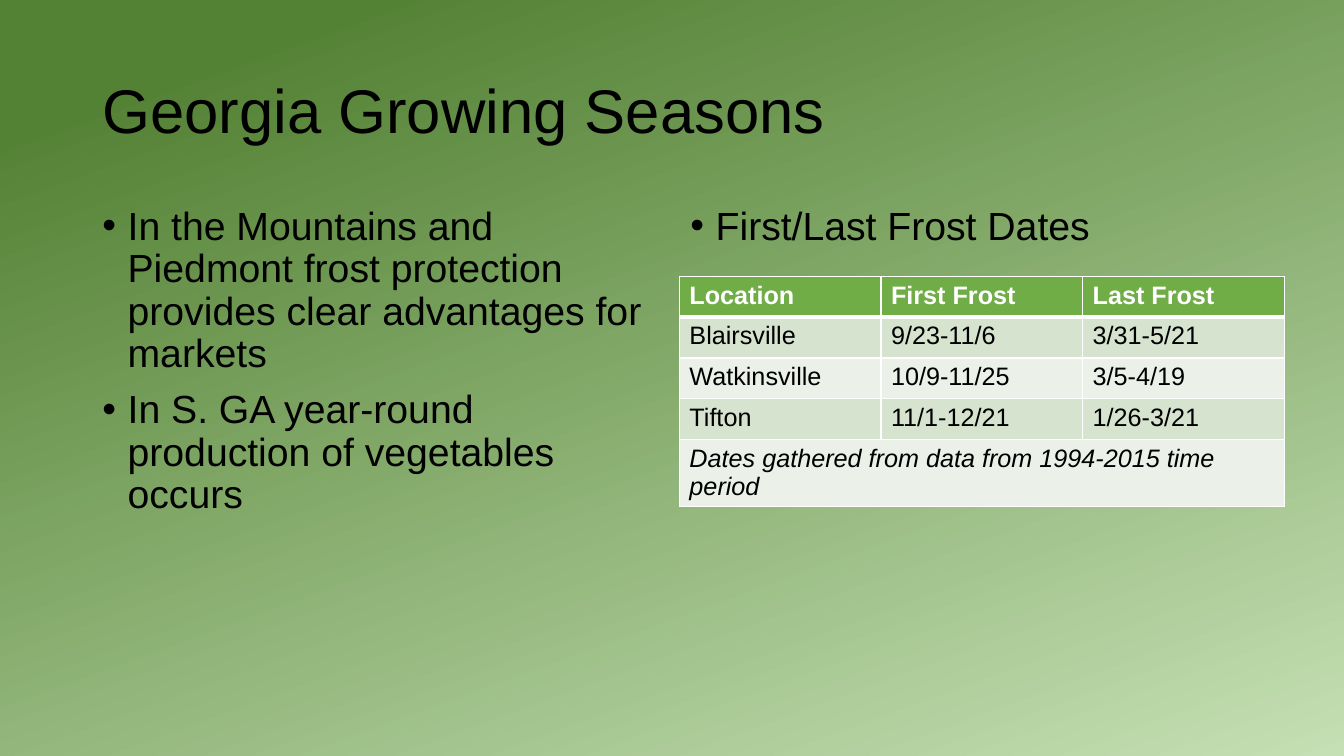
"""Build the Georgia growing seasons slide."""
from lxml.etree import SubElement
from pptx import Presentation
from pptx.dml.color import RGBColor
from pptx.enum.text import MSO_ANCHOR as Anchor, MSO_AUTO_SIZE as AutoSize, PP_ALIGN as Align
from pptx.oxml.ns import qn
from pptx.util import Pt

COLOURS = {
    "dark green": "548235",
    "pale green": "C5E0B4",
    "header": "70AD47",
    "odd row": "D5E3CF",
    "even row": "EBF1E9",
    "white": "FFFFFF",
    "black": "000000",
}
FONT = "Arial"
BODY_TOP, BODY_WIDTH, BODY_HEIGHT = 144, 408, 342.75
REGIONS = [
    "In the Mountains and Piedmont frost protection provides clear advantages for markets",
    "In S. GA year-round production of vegetables occurs",
]
FROST_DATES = [
    ["Location", "First Frost", "Last Frost"],
    ["Blairsville", "9/23-11/6", "3/31-5/21"],
    ["Watkinsville", "10/9-11/25", "3/5-4/19"],
    ["Tifton", "11/1-12/21", "1/26-3/21"],
    ["Dates gathered from data from 1994-2015 time period", "", ""],
]


def colour(name):
    return RGBColor.from_string(COLOURS[name])


def paint_background(page):
    fill = page.background.fill
    fill.gradient()
    fill.gradient_angle = 290
    stops = [(0.11, "dark green"), (1, "pale green")]
    for stop, (position, name) in zip(fill.gradient_stops, stops):
        stop.position = position
        stop.color.rgb = colour(name)


def add_text(para, text, size, name="black", bold=False, italic=False):
    span = para.add_run()
    span.text = text
    font = span.font
    font.name, font.size, font.bold, font.italic = FONT, Pt(size), bold, italic
    font.color.rgb = colour(name)


def place(box, left, top, width, height, anchor):
    box.left, box.top, box.width, box.height = map(Pt, (left, top, width, height))
    frame = box.text_frame
    frame.word_wrap = True
    frame.auto_size = AutoSize.NONE
    frame.vertical_anchor = anchor
    return frame


def fill_title(box, text):
    para = place(box, 66, 28.8, 828, 104.4, Anchor.MIDDLE).paragraphs[0]
    para.alignment = Align.LEFT
    para.line_spacing = 0.9
    add_text(para, text, 44)


def fill_list(box, left, items):
    frame = place(box, left, BODY_TOP, BODY_WIDTH, BODY_HEIGHT, Anchor.TOP)
    for index, item in enumerate(items):
        para = frame.add_paragraph() if index else frame.paragraphs[0]
        properties = para._p.get_or_add_pPr()
        properties.set("marL", str(Pt(18)))
        properties.set("indent", str(Pt(-18)))
        SubElement(properties, qn("a:buFont"), typeface=FONT)
        SubElement(properties, qn("a:buChar"), char="•")
        para.line_spacing = 0.9
        para.space_before = Pt(10 if index else 0)
        add_text(para, item, 28)


def add_border(cell, side, width):
    line = SubElement(cell._tc.get_or_add_tcPr(), qn(f"a:ln{side}"), w=str(Pt(width)))
    SubElement(SubElement(line, qn("a:solidFill")), qn("a:srgbClr"), val=COLOURS["white"])


def format_cell(cell, row):
    widths = {"L": 1, "R": 1, "T": 3 if row == 1 else 1, "B": 3 if row == 0 else 1}
    for side, width in widths.items():
        add_border(cell, side, width)
    cell.fill.solid()
    band = "odd row" if row % 2 else "even row"
    cell.fill.fore_color.rgb = colour(band if row else "header")


def add_frost_table(page):
    rows, columns = len(FROST_DATES), len(FROST_DATES[0])
    table = page.shapes.add_table(
        rows, columns, Pt(485.3), Pt(197.3), Pt(144 * columns), Pt(29.2 * rows)
    ).table
    last = rows - 1
    for row, values in enumerate(FROST_DATES):
        for column, value in enumerate(values):
            cell = table.cell(row, column)
            format_cell(cell, row)
            if value:
                add_text(
                    cell.text_frame.paragraphs[0], value, 18,
                    "black" if row else "white", bold=row == 0, italic=row == last,
                )
    table.cell(last, 0).merge(table.cell(last, columns - 1))


def main():
    deck = Presentation()
    deck.slide_width, deck.slide_height = Pt(960), Pt(540)
    page = deck.slides.add_slide(deck.slide_layouts[3])
    paint_background(page)
    fill_title(page.shapes.title, "Georgia Growing Seasons")
    fill_list(page.placeholders[1], 66, REGIONS)
    fill_list(page.placeholders[2], 486, ["First/Last Frost Dates"])
    add_frost_table(page)
    deck.save("out.pptx")


if __name__ == "__main__":
    main()
